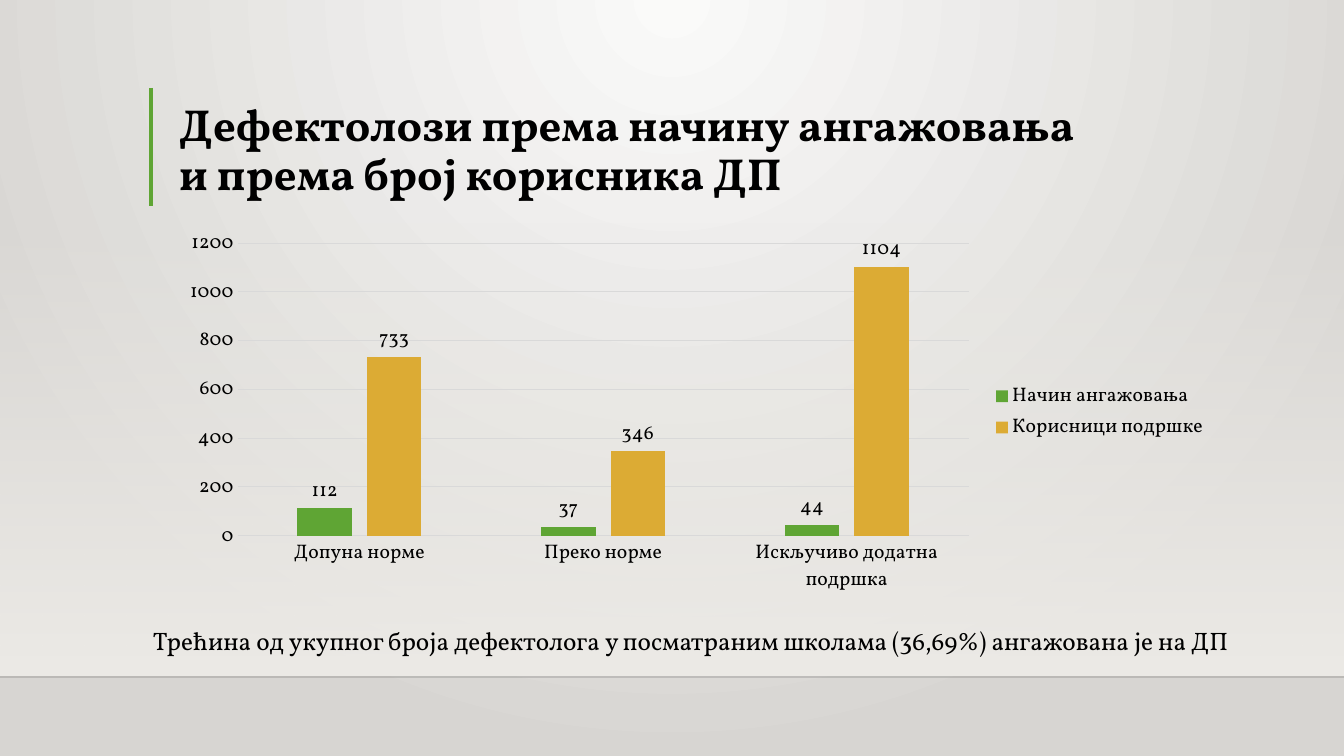
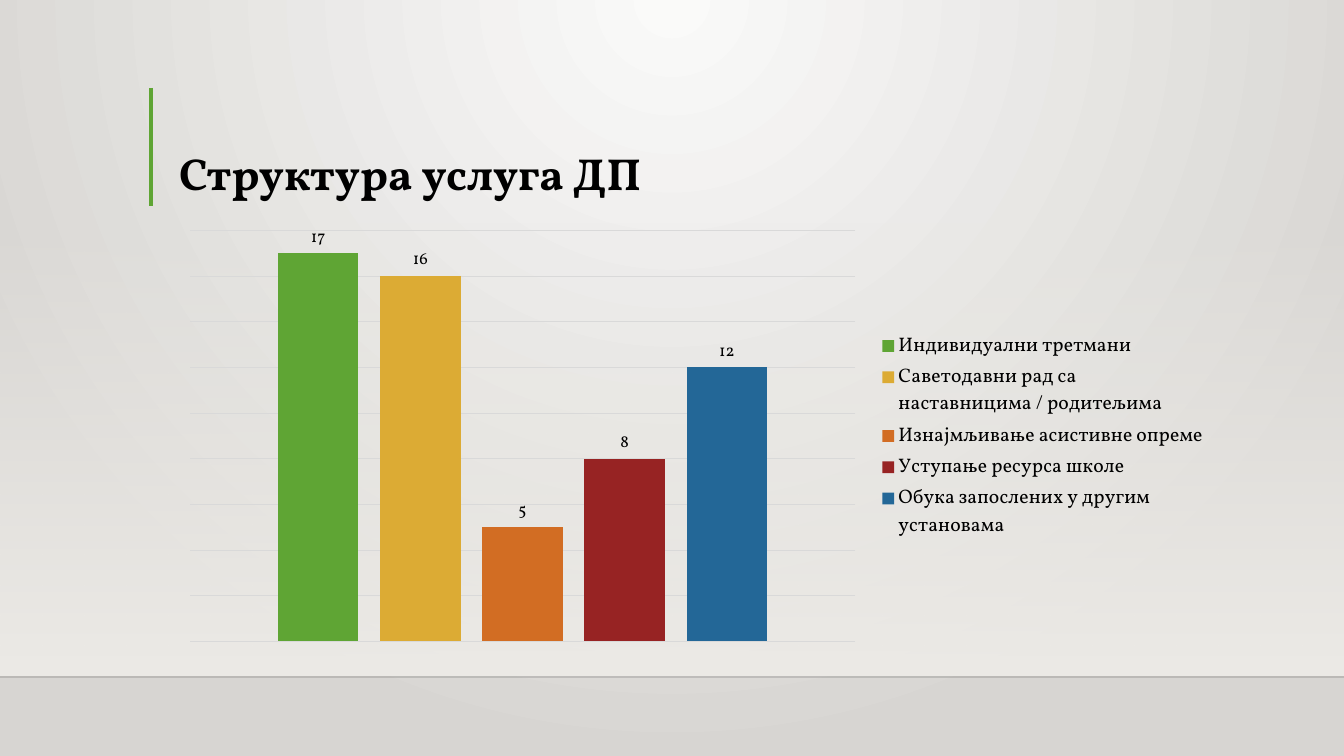
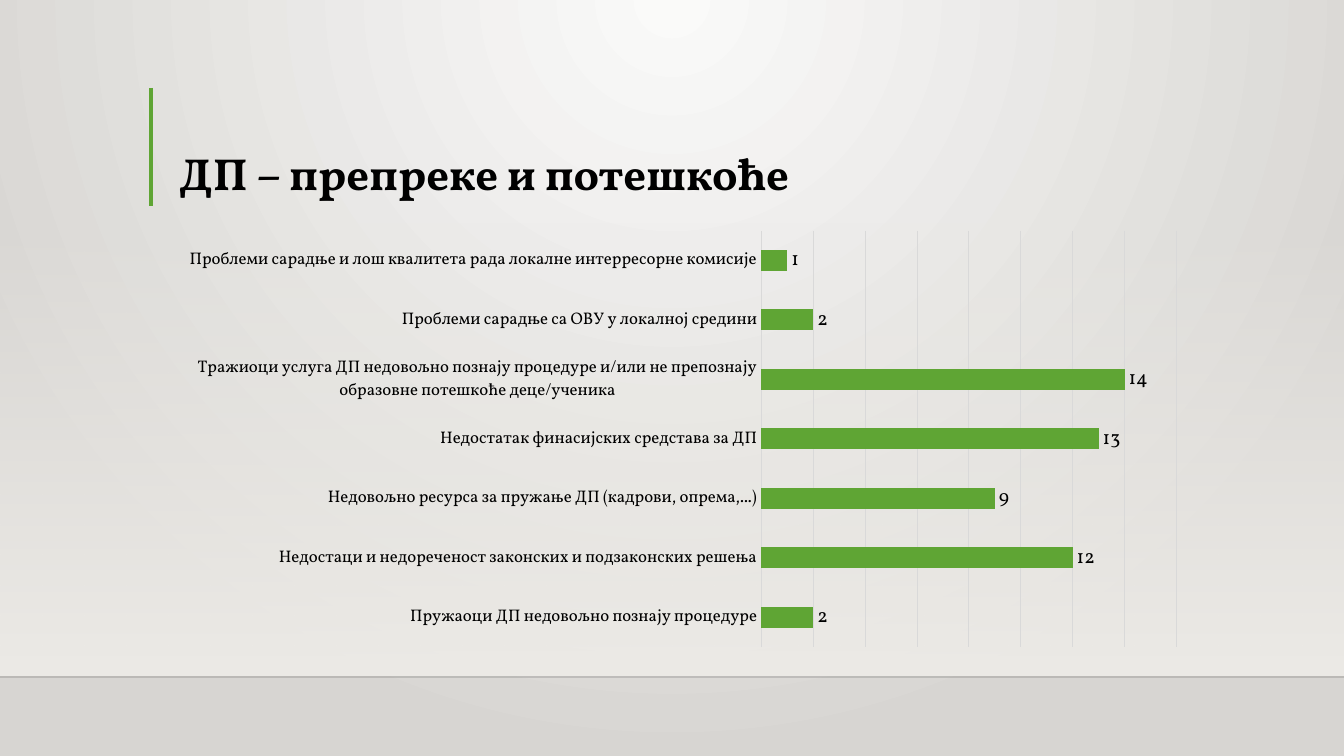
"""Three slides of charts on support provided by special educators."""
import lxml.etree
import pptx
import pptx.chart.data
import pptx.dml.color
import pptx.enum.chart
import pptx.enum.shapes
import pptx.enum.text
import pptx.oxml
import pptx.oxml.ns
import pptx.util

RGBColor = pptx.dml.color.RGBColor
ChartType = pptx.enum.chart.XL_CHART_TYPE

WIDTH, HEIGHT = 1344, 756
EMU_PER_PX = 12192000 / WIDTH
FONT = "Vollkorn"
BLACK = RGBColor(0x00, 0x00, 0x00)
RULE = RGBColor(0x00, 0x00, 0x01)
GRID = RGBColor(0xD9, 0xD9, 0xD9)
GREEN = RGBColor(0x5F, 0xA5, 0x34)
GOLD = RGBColor(0xDC, 0xAB, 0x34)
ORANGE = RGBColor(0xD2, 0x6D, 0x23)
RED = RGBColor(0x97, 0x23, 0x23)
BLUE = RGBColor(0x23, 0x67, 0x97)
SERIES_COLORS = [GREEN, GOLD, ORANGE, RED, BLUE]
BACKGROUND_INNER = RGBColor(0xFA, 0xFA, 0xF9)
BACKGROUND_OUTER = RGBColor(0xD7, 0xD5, 0xD2)
BAND = RGBColor(0xED, 0xEB, 0xE7)


def px(*lengths):
    """Turn pixel lengths into a list of EMU."""
    return [pptx.util.Emu(round(length * EMU_PER_PX)) for length in lengths]


def add_element(parent, tag, **attributes):
    """Append a drawing element such as a:alpha to a parent element."""
    return lxml.etree.SubElement(parent, pptx.oxml.ns.qn(tag), attributes)


def format_font(font, size, bold=False):
    """Apply the shared typeface and text colour."""
    font.name = FONT
    font.size = pptx.util.Pt(size)
    font.bold = bold
    font.color.rgb = BLACK


def write_text(shape, text, size, bold=False, line_spacing=None,
               anchor=pptx.enum.text.MSO_ANCHOR.TOP,
               auto_size=pptx.enum.text.MSO_AUTO_SIZE.NONE):
    """Fill a shape with one formatted paragraph."""
    frame = shape.text_frame
    frame.word_wrap = True
    frame.auto_size = auto_size
    frame.vertical_anchor = anchor
    paragraph = frame.paragraphs[0]
    paragraph.text = text
    paragraph.line_spacing = line_spacing
    for run in paragraph.runs:
        format_font(run.font, size, bold)


def set_gradient(fill, start, end):
    """Give a fill a two-stop vertical gradient."""
    fill.gradient()
    fill.gradient_angle = 270
    for stop, color in zip(fill.gradient_stops, (start, end)):
        stop.color.rgb = color


def add_line(slide, start, end, color, width, opacity=100):
    """Draw a straight line between two points."""
    line = slide.shapes.add_connector(
        pptx.enum.shapes.MSO_CONNECTOR.STRAIGHT, *px(*start, *end))
    line.line.color.rgb = color
    line.line.width = pptx.util.Pt(width)
    if opacity < 100:
        color_element = line.element.xpath(".//a:ln//a:srgbClr")[0]
        add_element(color_element, "a:alpha", val=str(opacity * 1000))
    add_element(line.element.spPr, "a:effectLst")
    return line


def add_band(slide):
    """Draw the band that fades in toward the foot of the slide."""
    band = slide.shapes.add_shape(
        pptx.enum.shapes.MSO_SHAPE.RECTANGLE, *px(0, 222, WIDTH, 454))
    band.shadow.inherit = False
    band.line.fill.background()
    set_gradient(band.fill, BAND, BAND)
    first_stop = band.element.xpath(".//a:gs/a:srgbClr")[0]
    add_element(first_stop, "a:alpha", val="0")
    return band


def style_layout(slide):
    """Put the shared background, band and lines on the layout of a slide."""
    layout = slide.slide_layout
    for placeholder in list(layout.placeholders)[1:]:
        layout.shapes.element.remove(placeholder.element)
    set_gradient(layout.background.fill, BACKGROUND_INNER, BACKGROUND_OUTER)
    gradient = layout.element.xpath(".//p:bgPr/a:gradFill")[0]
    gradient.remove(gradient.find(pptx.oxml.ns.qn("a:lin")))
    circle = add_element(gradient, "a:path", path="circle")
    add_element(circle, "a:fillToRect", l="43000", t="0", r="43000", b="100000")
    decorations = [
        add_band(slide),
        add_line(slide, (0, 677), (WIDTH, 677), RULE, 1, opacity=20),
        add_line(slide, (151, 88), (151, 206), GREEN, 3),
    ]
    for decoration in decorations:
        layout.shapes.element.append(decoration.element)


def set_title(slide, text):
    """Place and format the title placeholder."""
    title = slide.shapes.title
    title.left, title.top, title.width, title.height = px(169, 89, 1049, 116)
    write_text(title, text, 32, bold=True, line_spacing=0.9,
               anchor=pptx.enum.text.MSO_ANCHOR.BOTTOM)
    title.text_frame.paragraphs[0].alignment = pptx.enum.text.PP_ALIGN.LEFT


def format_axis(axis, size):
    """Show an axis without ticks, or hide it when it has no text size."""
    axis.major_tick_mark = axis.minor_tick_mark = pptx.enum.chart.XL_TICK_MARK.NONE
    axis.visible = size is not None
    if size is not None:
        format_font(axis.tick_labels.font, size)


def format_line(line):
    """Give a chart line the light grid style."""
    line.color.rgb = GRID
    line.width = pptx.util.Pt(0.75)


def add_chart(slide, kind, box, categories, series, maximum, unit, gap,
              overlap=0, category_size=None, value_size=None, label_size=14,
              legend=True):
    """Add a bar or column chart with value labels."""
    data = pptx.chart.data.CategoryChartData()
    data.categories = categories
    for name, values in series:
        data.add_series(name, values)
    chart = slide.shapes.add_chart(kind, *px(*box), data).chart
    format_font(chart.font, 14)
    chart.has_title = False
    chart.has_legend = legend
    if legend:
        chart.legend.position = pptx.enum.chart.XL_LEGEND_POSITION.RIGHT
        chart.legend.include_in_layout = False
        format_font(chart.legend.font, 14)
    format_axis(chart.category_axis, category_size)
    format_line(chart.category_axis.format.line)
    value_axis = chart.value_axis
    format_axis(value_axis, value_size)
    value_axis.format.line.fill.background()
    value_axis.minimum_scale = 0
    value_axis.maximum_scale = maximum
    value_axis.major_unit = unit
    value_axis.has_major_gridlines = True
    format_line(value_axis.major_gridlines.format.line)
    plot = chart.plots[0]
    plot.vary_by_categories = False
    plot.gap_width = gap
    plot.overlap = overlap
    for bars, color in zip(plot.series, SERIES_COLORS):
        bars.invert_if_negative = False
        bars.format.fill.solid()
        bars.format.fill.fore_color.rgb = color
        labels = bars.data_labels
        labels.show_value = True
        labels.position = pptx.enum.chart.XL_LABEL_POSITION.OUTSIDE_END
        format_font(labels.font, label_size)


def build_engagement(slide):
    """Compare engagement of special educators with users of support."""
    set_title(slide, "Дефектолози према начину ангажовања \vи према број корисника ДП")
    note = slide.shapes.add_textbox(*px(143, 620, 1137, 40))
    write_text(
        note,
        "Трећина од укупног броја дефектолога у посматраним школама (36,69%) ангажована је на ДП",
        18, auto_size=pptx.enum.text.MSO_AUTO_SIZE.SHAPE_TO_FIT_TEXT)
    add_chart(
        slide, ChartType.COLUMN_CLUSTERED, (169, 222, 1049, 380),
        ["Допуна норме", "Преко норме", "Искључиво додатна подршка"],
        [("Начин ангажовања", [112, 37, 44]),
         ("Корисници подршке", [733, 346, 1104])],
        maximum=1200, unit=200, gap=219, overlap=-27,
        category_size=14, value_size=14)


def build_services(slide):
    """Show the structure of services."""
    set_title(slide, "Структура услуга ДП")
    add_chart(
        slide, ChartType.COLUMN_CLUSTERED, (169, 222, 1049, 428), ["1"],
        [("Индивидуални третмани", [17]),
         ("Саветодавни рад са наставницима / родитељима", [16]),
         ("Изнајмљивање асистивне опреме", [5]),
         ("Уступање ресурса школе", [8]),
         ("Обука запослених у другим установама", [12])],
        maximum=18, unit=2, gap=219, overlap=-27, label_size=12)


def build_obstacles(slide):
    """Show obstacles and difficulties."""
    set_title(slide, "ДП – препреке и потешкоће")
    obstacles = {
        "Пружаоци ДП недовољно познају процедуре": 2,
        "Недостаци и недореченост законских и подзаконских решења": 12,
        "Недовољно ресурса за пружање ДП (кадрови, опрема,...)": 9,
        "Недостатак финасијских средстава за ДП": 13,
        "Тражиоци услуга ДП недовољно познају процедуре и/или не препознају "
        "образовне потешкоће деце/ученика": 14,
        "Проблеми сарадње са ОВУ у локалној средини": 2,
        "Проблеми сарадње и лош квалитета рада локалне интерресорне комисије": 1,
    }
    add_chart(
        slide, ChartType.BAR_CLUSTERED, (169, 222, 1028, 434),
        list(obstacles), [("Series 1", list(obstacles.values()))],
        maximum=16, unit=2, gap=182, category_size=12, legend=False)


def main():
    """Build and save the presentation."""
    presentation = pptx.Presentation()
    presentation.slide_width, presentation.slide_height = px(WIDTH, HEIGHT)
    layout = presentation.slide_layouts.get_by_name("Title Only")
    builders = [build_engagement, build_services, build_obstacles]
    slides = [presentation.slides.add_slide(layout) for _ in builders]
    style_layout(slides[0])
    for build, slide in zip(builders, slides):
        build(slide)
    presentation.save("out.pptx")


if __name__ == "__main__":
    main()
